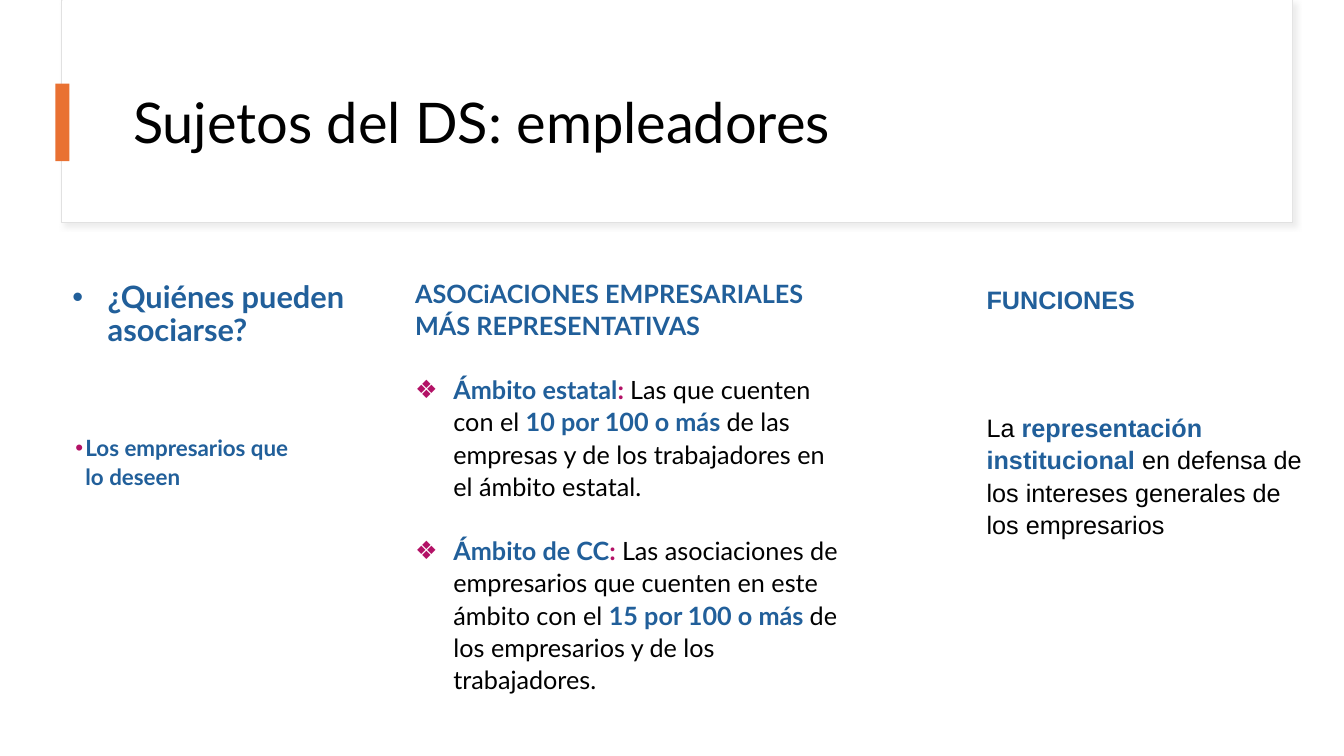
"""Build the slide on employers as subjects of union law."""
import pptx
import pptx.util
import pptx.dml.color
import pptx.enum.shapes
import pptx.enum.text
import pptx.oxml.ns
import lxml.etree

Pt = pptx.util.Pt
HUES = {"ink": "000000", "blue": "215F9A", "plum": "B31166", "white": "FFFFFF",
        "edge": "E1E1E1", "shade": "D9D9D9", "mark": "E97132"}
TITLE = "Sujetos del DS: empleadores"
PANELS = [
    {"at": (43.92, 0, 879.12, 159.12), "fill": "white", "line": "edge", "shade": True},
    {"at": (44.64, 0, 878.4, 158.4), "fill": "white"},
    {"at": (39.6, 59.76, 10.08, 55.44), "fill": "mark"},
]
BLOCKS = [
    {"at": (44.64, 198, 224.64, 290.88), "font": "Lato", "size": 22, "lead": 0.9,
     "paras": [{"mark": "•", "hue": "blue", "dent": 25.2,
                "runs": [("¿Quiénes pueden asociarse?", "blue")]}]},
    {"at": (46.8, 305.28, 175.68, 48.24), "font": "Lato", "size": 16, "lead": 1.07,
     "paras": [{"mark": "•", "hue": "plum", "dent": 7.2,
                "runs": [("Los empresarios que lo deseen", "blue")]}]},
    {"at": (697.68, 198, 239.76, 192.24), "font": "Arial", "size": 18, "lead": 1.07,
     "paras": [
         {"runs": [("FUNCIONES", "blue")]},
         {"before": 53.3,
          "runs": [("La ", "ink"), ("representación institucional ", "blue"),
                   ("en defensa de los intereses generales de los empresarios", "ink")]}]},
    {"at": (289.44, 193.68, 318.24, 286.56), "font": "Lato", "size": 18, "lead": 1.07,
     "paras": [
         {"runs": [("ASOCiACIONES EMPRESARIALES MÁS REPRESENTATIVAS", "blue")]},
         {"mark": "❖", "hue": "plum", "dent": 27.36,
          "runs": [("Ámbito estatal", "blue"), (": ", "plum"),
                   ("Las que cuenten con el ", "ink"), ("10 por 100 o más ", "blue"),
                   ("de las empresas y de los trabajadores en el ámbito estatal.", "ink")]},
         {"mark": "❖", "hue": "plum", "dent": 27.36,
          "runs": [("Ámbito de CC", "blue"), (": ", "plum"),
                   ("Las asociaciones de empresarios que cuenten en este ámbito con el ", "ink"),
                   ("15 por 100 o más ", "blue"),
                   ("de los empresarios y de los trabajadores.", "ink")]}]},
]


def tint(name):
    return pptx.dml.color.RGBColor.from_string(HUES[name])


def node(base, tag, **attrs):
    item = lxml.etree.SubElement(base, pptx.oxml.ns.qn(tag))
    for key, value in attrs.items():
        item.set(key, str(value))
    return item


def add_panel(slide, data):
    box = slide.shapes.add_shape(pptx.enum.shapes.MSO_SHAPE.RECTANGLE, *map(Pt, data["at"]))
    box.shadow.inherit = False
    box.fill.solid()
    box.fill.fore_color.rgb = tint(data["fill"])
    if "line" in data:
        box.line.color.rgb = tint(data["line"])
        box.line.width = Pt(0.75)
    else:
        box.line.fill.background()
    if "shade" in data:
        glow = box._element.spPr.find(pptx.oxml.ns.qn("a:effectLst"))
        cast = node(glow, "a:outerShdw", blurRad=Pt(4), dist=Pt(3), dir=45 * 60000,
                    algn="tl", rotWithShape=0)
        node(node(cast, "a:srgbClr", val=HUES["shade"]), "a:alpha", val=50000)


def add_run(para, text, font, size, hue, bold):
    run = para.add_run()
    run.text = text
    run.font.name = font
    run.font.size = Pt(size)
    run.font.bold = bold
    run.font.color.rgb = tint(hue)


def add_mark(para, data):
    props = para._p.get_or_add_pPr()
    if "mark" in data:
        props.set("marL", str(Pt(data["dent"])))
        props.set("indent", str(-Pt(data["dent"])))
        node(node(props, "a:buClr"), "a:srgbClr", val=HUES[data["hue"]])
        node(props, "a:buFont", typeface="Arial")
        node(props, "a:buChar", char=data["mark"])
    node(node(props, "a:tabLst"), "a:tab", pos=Pt(36), algn="l")


def add_block(slide, data):
    frame = slide.shapes.add_textbox(*map(Pt, data["at"])).text_frame
    frame.word_wrap = True
    for rank, item in enumerate(data["paras"]):
        para = frame.add_paragraph() if rank else frame.paragraphs[0]
        add_mark(para, item)
        para.line_spacing = data["lead"]
        para.space_before = Pt(item.get("before", 7.5) if rank else 0)
        para.space_after = Pt(15)
        for text, hue in item["runs"]:
            add_run(para, text, data["font"], data["size"], hue, hue != "ink")


def set_title(slide):
    title = slide.shapes.title
    title.left, title.top, title.width, title.height = map(Pt, (87.84, 43.2, 800.64, 92.88))
    frame = title.text_frame
    frame.word_wrap = True
    frame.auto_size = pptx.enum.text.MSO_AUTO_SIZE.NONE
    frame.vertical_anchor = pptx.enum.text.MSO_ANCHOR.MIDDLE
    para = frame.paragraphs[0]
    para.alignment = pptx.enum.text.PP_ALIGN.LEFT
    para.line_spacing = 0.9
    add_run(para, TITLE, "Lato", 40, "ink", False)
    slide.shapes._spTree.append(title._element)


def main():
    deck = pptx.Presentation()
    deck.slide_width, deck.slide_height = Pt(960), Pt(540)
    slide = deck.slides.add_slide(deck.slide_layouts[5])
    for data in PANELS:
        add_panel(slide, data)
    set_title(slide)
    for data in BLOCKS:
        add_block(slide, data)
    deck.save("out.pptx")


if __name__ == "__main__":
    main()
